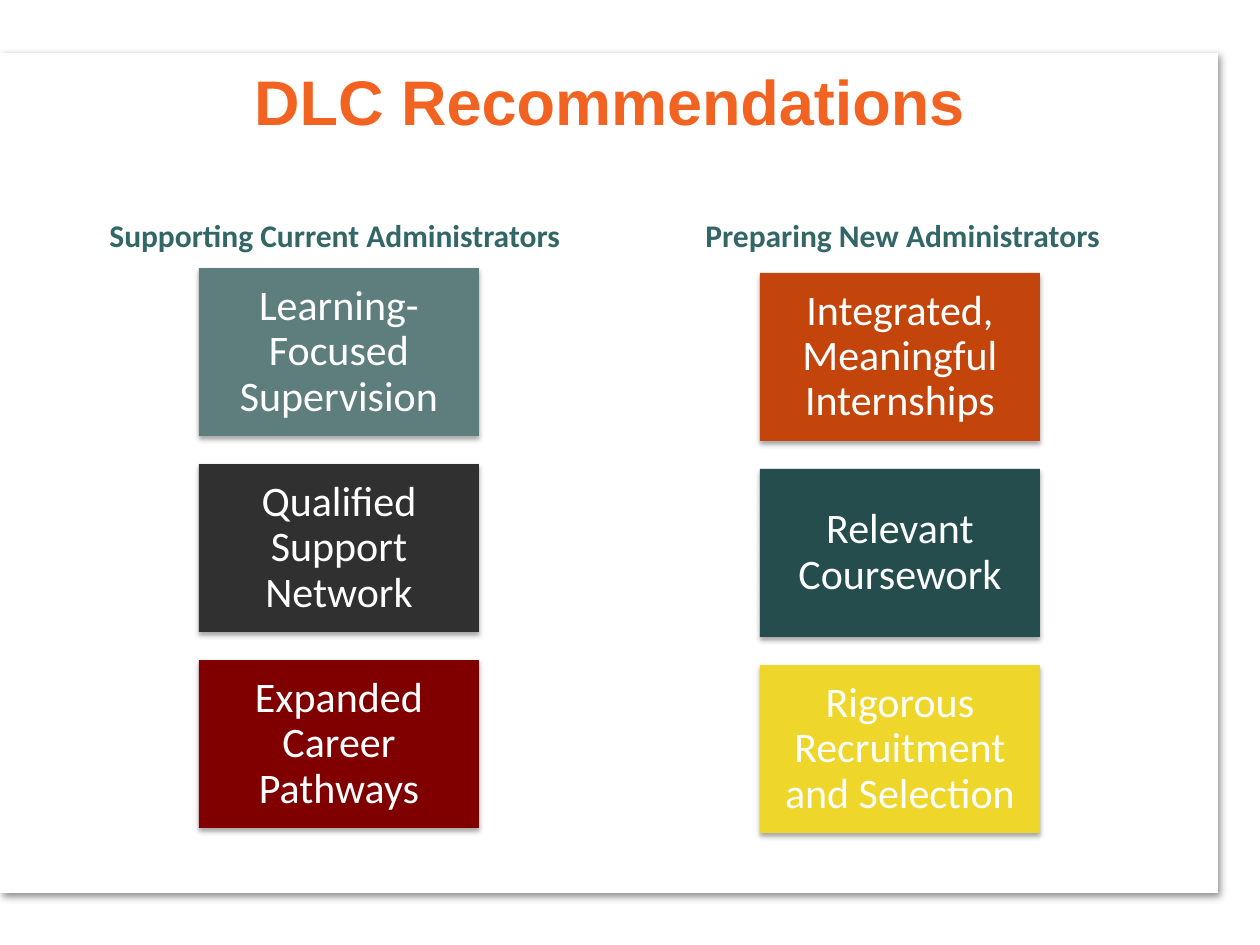
from dataclasses import dataclass

from lxml import etree
from pptx import Presentation
from pptx.dml.color import RGBColor
from pptx.enum.shapes import MSO_SHAPE
from pptx.enum.text import MSO_ANCHOR, PP_ALIGN
from pptx.oxml.ns import qn
from pptx.util import Emu, Pt

RECTANGLE = MSO_SHAPE.RECTANGLE
CENTER = PP_ALIGN.CENTER
MIDDLE = MSO_ANCHOR.MIDDLE
TITLE_ONLY = 5
PX_PER_INCH = 126


@dataclass(frozen=True)
class Theme:
    title_font: str = "Arial"
    body_font: str = "Calibri"
    title_size: int = 36
    heading_size: int = 18
    card_size: int = 24
    title: str = "F26322"
    heading: str = "336666"
    white: str = "FFFFFF"
    shadow: str = "000000"


THEME = Theme()

# Each column: heading, heading box, cards box, (card text, fill)
COLUMNS = [
    ("Supporting Current Administrators", (97, 210, 484, 50), (199, 268, 280, 560), [
        ("Learning- Focused Supervision", "5E7D7D"),
        ("Qualified Support Network", "303030"),
        ("Expanded Career Pathways", "800000"),
    ]),
    ("Preparing New Administrators", (693, 210, 426, 50), (760, 273, 280, 560), [
        ("Integrated, Meaningful Internships", "C3450C"),
        ("Relevant Coursework", "264D4D"),
        ("Rigorous Recruitment and Selection", "EED62A"),
    ]),
]


def px(value):
    return Emu(round(value * 914400 / PX_PER_INCH))


def box_emu(box):
    return [px(value) for value in box]


def style_text(paragraph, font_name, size, color, bold=False):
    font = paragraph.font
    font.name, font.size, font.bold = font_name, Pt(size), bold
    font.color.rgb = RGBColor.from_string(color)


def add_shadow(shape, opacity, blur, distance, angle):
    """Outer shadow: opacity in percent, lengths in points, angle in degrees."""
    shape.shadow.inherit = False
    effects = shape._element.spPr.find(qn("a:effectLst"))
    outer = etree.SubElement(
        effects, qn("a:outerShdw"), blurRad=str(Pt(blur)), dist=str(Pt(distance)),
        dir=str(angle * 60000), algn="ctr", rotWithShape="0")
    color = etree.SubElement(outer, qn("a:srgbClr"), val=THEME.shadow)
    etree.SubElement(color, qn("a:alpha"), val=str(opacity * 1000))


def add_block(shapes, box, fill):
    block = shapes.add_shape(RECTANGLE, *box_emu(box))
    block.fill.solid()
    block.fill.fore_color.rgb = RGBColor.from_string(fill)
    block.line.fill.background()
    return block


def add_panel(slide, box):
    panel = add_block(slide.shapes, box, THEME.white)
    add_shadow(panel, 43, 4, 3, 45)
    # Behind the title
    slide.shapes._spTree.insert(2, panel._element)


def set_title(slide, box, text):
    title = slide.shapes.title
    title.left, title.top, title.width, title.height = box_emu(box)
    frame = title.text_frame
    frame.text = text
    frame.vertical_anchor = MIDDLE
    frame.paragraphs[0].alignment = CENTER
    style_text(frame.paragraphs[0], THEME.title_font, THEME.title_size, THEME.title, True)


def add_card(shapes, box, text, fill):
    card = add_block(shapes, box, fill)
    add_shadow(card, 35, 3.1, 1.8, 90)
    frame = card.text_frame
    frame.word_wrap = True
    frame.vertical_anchor = MIDDLE
    frame.margin_left = frame.margin_right = px(13)
    frame.margin_top = frame.margin_bottom = px(13)
    frame.text = text
    paragraph = frame.paragraphs[0]
    paragraph.alignment = CENTER
    paragraph.line_spacing = 0.9
    style_text(paragraph, THEME.body_font, THEME.card_size, THEME.white)


def add_column(slide, heading, heading_box, cards_box, cards, gap=28):
    shapes = slide.shapes.add_group_shape().shapes

    # Heading
    frame = shapes.add_textbox(*box_emu(heading_box)).text_frame
    frame.word_wrap = True
    frame.text = heading
    style_text(frame.paragraphs[0], THEME.body_font, THEME.heading_size, THEME.heading, True)

    # Equal cards stacked with equal gaps
    left, top, width, height = cards_box
    card_height = (height - gap * (len(cards) - 1)) // len(cards)
    for row, (text, fill) in enumerate(cards):
        card_top = top + row * (card_height + gap)
        add_card(shapes, (left, card_top, width, card_height), text, fill)


def main():
    presentation = Presentation()
    presentation.slide_width, presentation.slide_height = px(1260), px(945)
    slide = presentation.slides.add_slide(presentation.slide_layouts[TITLE_ONLY])

    add_panel(slide, (0, 53, 1218, 840))
    set_title(slide, (0, 53, 1219, 95), "DLC Recommendations")
    for column in COLUMNS:
        add_column(slide, *column)

    presentation.save("out.pptx")


if __name__ == "__main__":
    main()
